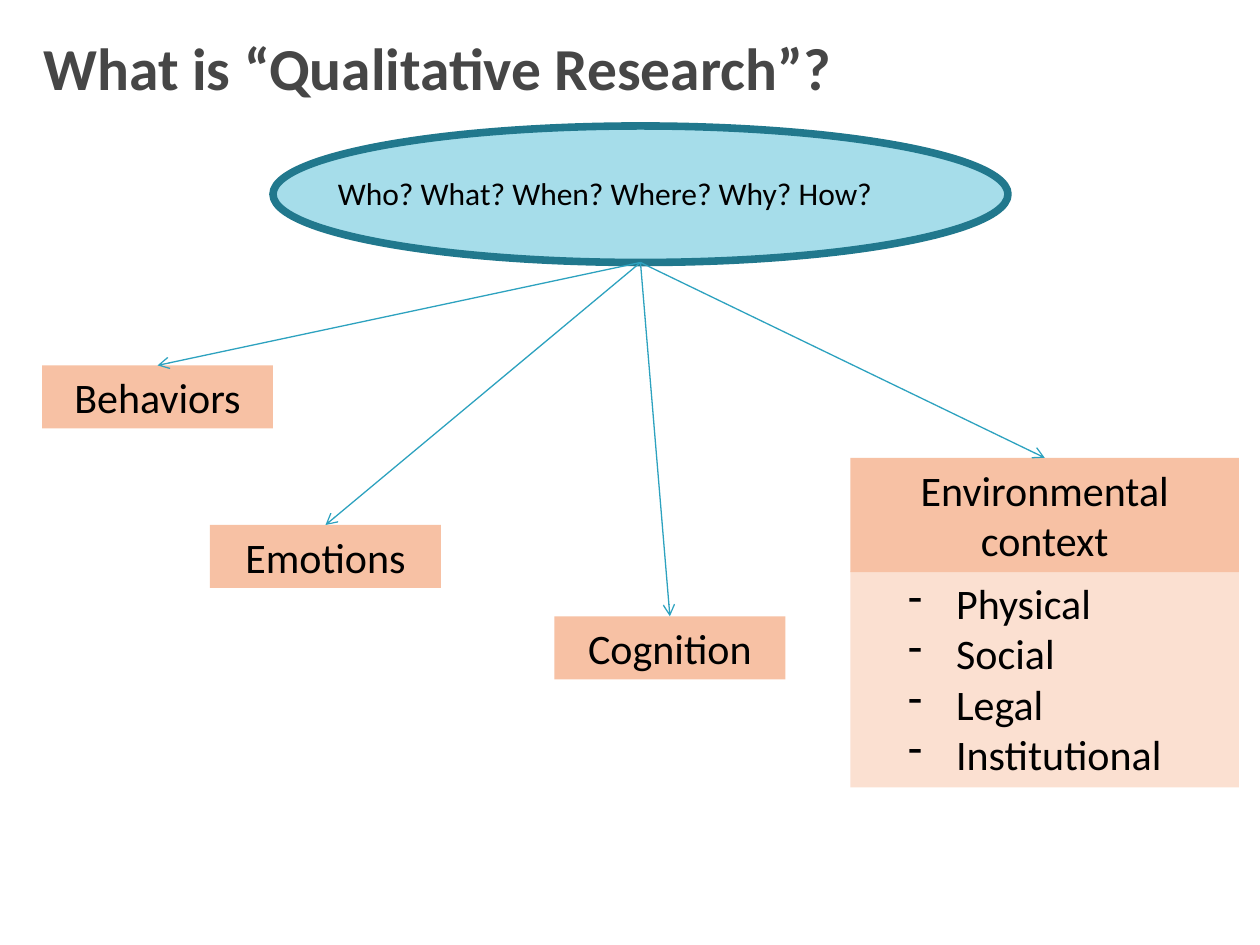
from lxml import etree
from pptx import Presentation
from pptx import util as u
from pptx.dml.color import RGBColor
from pptx.enum import shapes, text
from pptx.oxml.ns import qn

TITLE_GREY = RGBColor(0x46, 0x46, 0x46)
BLACK = RGBColor(0, 0, 0)
PALE_BLUE = RGBColor(0xA6, 0xDD, 0xEA)
DARK_TEAL = RGBColor(0x21, 0x78, 0x8D)
ARROW_BLUE = RGBColor(0x2D, 0xA2, 0xBF)
PEACH = RGBColor(0xF7, 0xC1, 0xA4)
PALE_PEACH = RGBColor(0xFB, 0xE0, 0xD1)

COLUMNS, ROWS = 120, 90
LEFT, CENTER = text.PP_ALIGN.LEFT, text.PP_ALIGN.CENTER
TOPIC_WIDTH, TOPIC_HEIGHT = 22, 6
CONTEXT_LEFT, CONTEXT_WIDTH = 81, 37


class DiagramSlide:
    """Draws elements on one slide, with lengths in grid columns and rows."""

    font_name = "Calibri"

    def __init__(self, presentation):
        self.column = presentation.slide_width / COLUMNS
        self.row = presentation.slide_height / ROWS
        self.slide = presentation.slides.add_slide(presentation.slide_layouts[6])

    def place(self, across, down):
        return u.Emu(round(across * self.column)), u.Emu(round(down * self.row))

    def fill_text(self, shape, lines, alignment=LEFT, bullet=None, **font_values):
        frame = shape.text_frame
        frame.word_wrap = True
        frame.vertical_anchor = text.MSO_ANCHOR.TOP
        values = {"name": self.font_name, "size": u.Pt(24)} | font_values
        color = values.pop("color", BLACK)
        for index, line in enumerate(lines):
            paragraph = frame.add_paragraph() if index else frame.paragraphs[0]
            paragraph.alignment = alignment
            if bullet:
                properties = paragraph._p.get_or_add_pPr()
                properties.set("marL", str(u.Inches(0.74)))
                properties.set("indent", str(u.Inches(-0.38)))
                etree.SubElement(properties, qn("a:buChar"), char=bullet)
            run = paragraph.add_run()
            run.text = line
            for name, value in values.items():
                setattr(run.font, name, value)
            run.font.color.rgb = color

    def label(self, left, top, width, height, line, **font_values):
        box = self.slide.shapes.add_textbox(
            *self.place(left, top), *self.place(width, height))
        self.fill_text(box, [line], **font_values)

    def panel(self, kind, left, top, width, height, fill, line_color=None, line_width=0):
        shape = self.slide.shapes.add_shape(
            kind, *self.place(left, top), *self.place(width, height))
        shape.shadow.inherit = False
        shape.fill.solid()
        shape.fill.fore_color.rgb = fill
        if line_color is None:
            shape.line.fill.background()
        else:
            shape.line.color.rgb = line_color
            shape.line.width = u.Pt(line_width)
        return shape

    def box(self, left, top, width, height, lines, fill=PEACH, **text_values):
        shape = self.panel(shapes.MSO_SHAPE.RECTANGLE, left, top, width, height, fill)
        self.fill_text(shape, lines, **text_values)

    def arrow(self, start, end):
        connector = self.slide.shapes.add_connector(
            shapes.MSO_CONNECTOR.STRAIGHT, *self.place(*start), *self.place(*end))
        connector.line.color.rgb = ARROW_BLUE
        connector.line.width = u.Pt(0.75)
        properties = connector._element.spPr
        etree.SubElement(properties.find(qn("a:ln")), qn("a:tailEnd"), type="arrow")
        etree.SubElement(properties, qn("a:effectLst"))


def main():
    presentation = Presentation()
    presentation.slide_width, presentation.slide_height = u.Inches(10), u.Inches(7.5)
    diagram = DiagramSlide(presentation)

    diagram.panel(shapes.MSO_SHAPE.OVAL, 26, 12, 70, 13, PALE_BLUE, DARK_TEAL, 4.33)
    diagram.label(3, 2.4, 115, 8, "What is “Qualitative Research”?",
                  size=u.Pt(34), bold=True, color=TITLE_GREY)
    diagram.label(31, 16, 60, 4.8, "Who? What? When? Where? Why? How?", size=u.Pt(18))

    diagram.box(CONTEXT_LEFT, 54.4, CONTEXT_WIDTH, 20.6,
                ["Physical", "Social", "Legal", "Institutional"],
                fill=PALE_PEACH, bullet="-")

    topics = [
        ("Behaviors", 4, 34.8, TOPIC_WIDTH, TOPIC_HEIGHT),
        ("Emotions", 20, 50, TOPIC_WIDTH, TOPIC_HEIGHT),
        ("Cognition", 52.8, 58.7, TOPIC_WIDTH, TOPIC_HEIGHT),
        ("Environmental context", CONTEXT_LEFT, 43.6, CONTEXT_WIDTH, 10.9),
    ]
    for name, left, top, width, height in topics:
        diagram.box(left, top, width, height, [name], alignment=CENTER)
    for _, left, top, width, _ in topics:
        diagram.arrow((61, 25), (left + width / 2, top))

    presentation.save("out.pptx")


if __name__ == "__main__":
    main()
